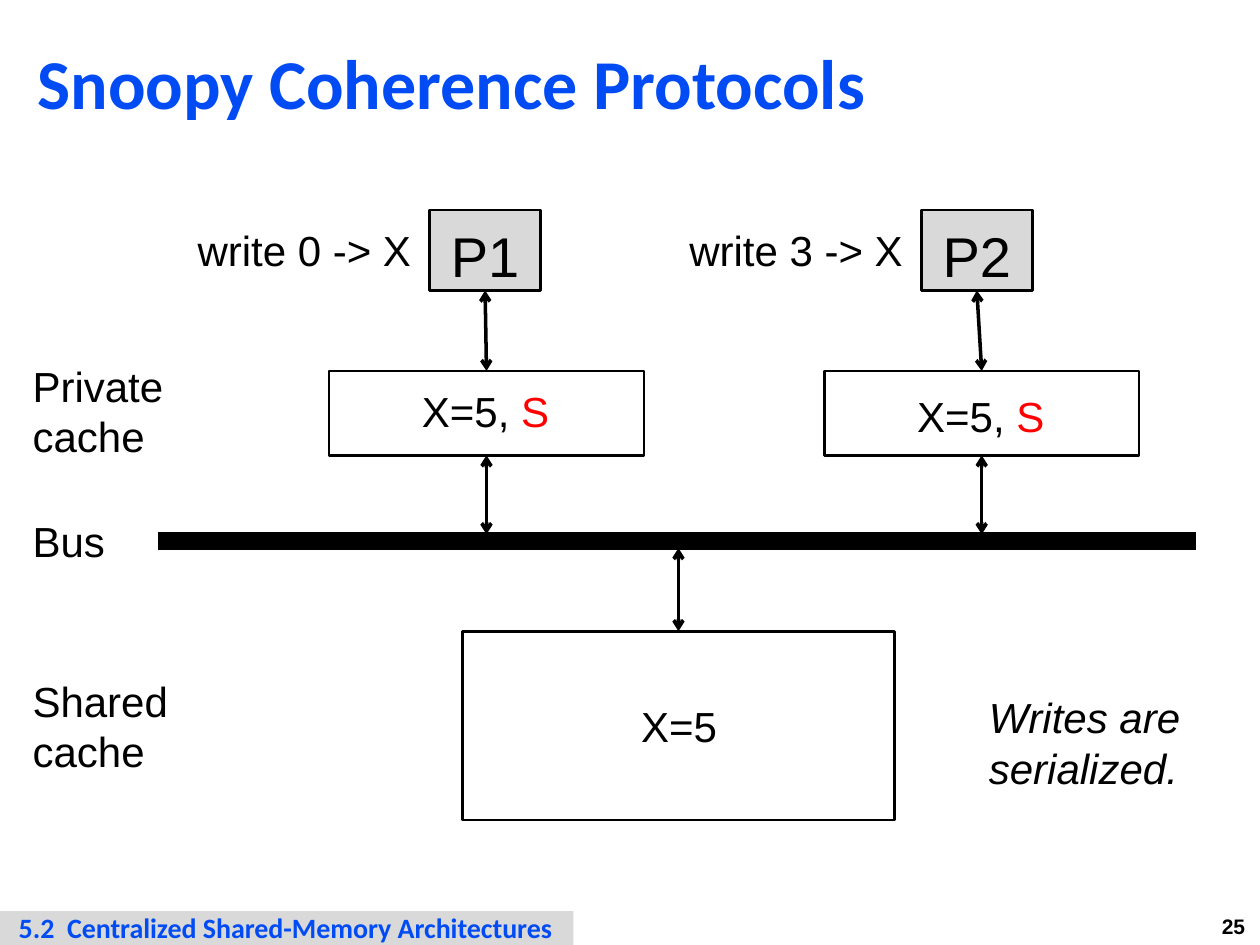
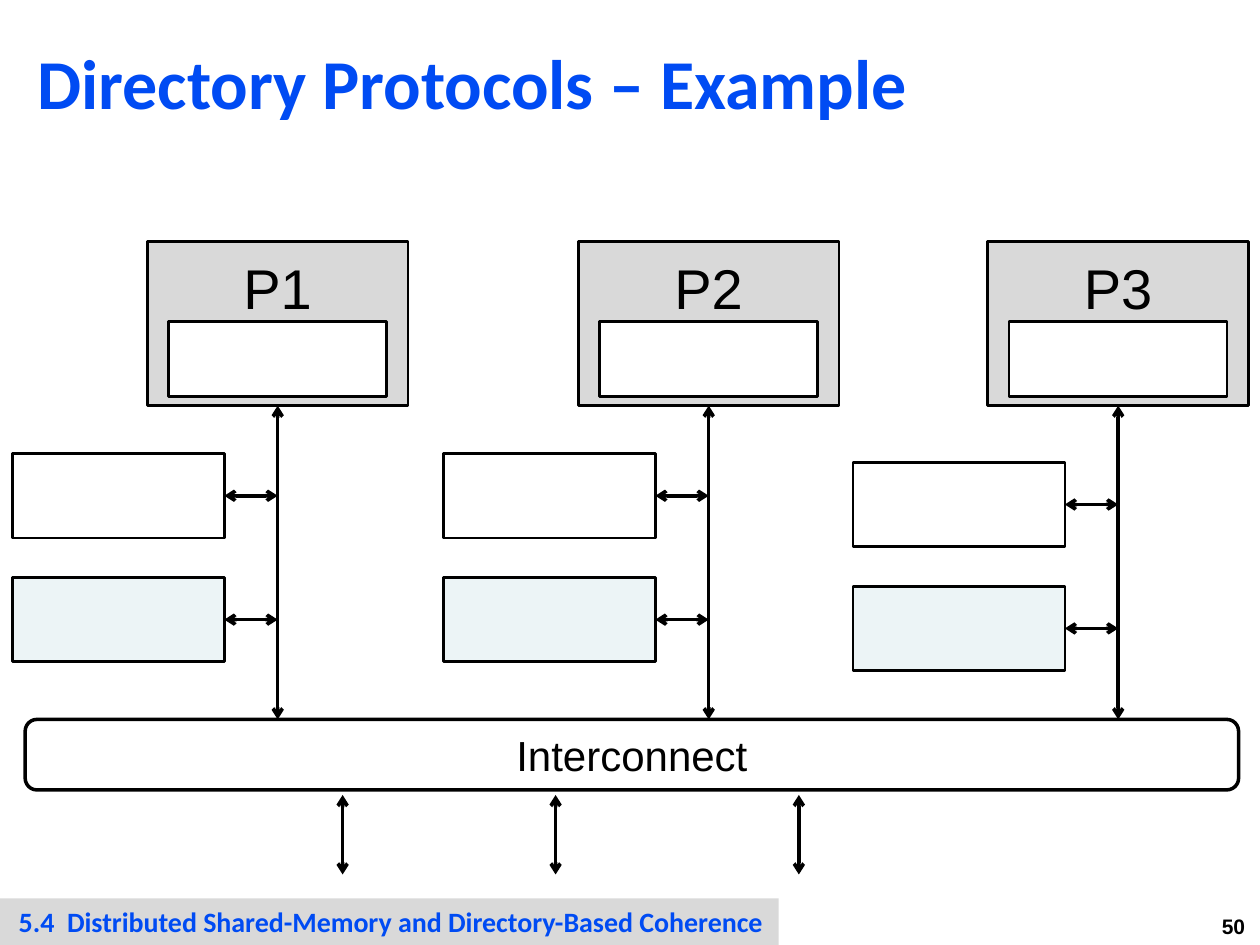
from pptx import Presentation
from pptx import util as u
from pptx.dml.color import RGBColor
from pptx.enum import shapes, text
from pptx.oxml import ns
from lxml import etree

BLUE = RGBColor(0x00, 0x4B, 0xF3)
BLACK = RGBColor(0x00, 0x00, 0x00)
RED = RGBColor(0xFF, 0x00, 0x00)
GREY = RGBColor(0xD9, 0xD9, 0xD9)
WHITE = RGBColor(0xFF, 0xFF, 0xFF)
PALE = RGBColor(0xEC, 0xF4, 0xF6)
RECT = shapes.MSO_SHAPE.RECTANGLE
ROUNDED = shapes.MSO_SHAPE.ROUNDED_RECTANGLE
ALIGN = text.PP_ALIGN
ANCHOR = text.MSO_ANCHOR
TOP, BOTTOM, RIGHT = 0, 2, 3


def add_box(slide, words, left, top, width, height, *, kind=None, fill=None,
            line=None, size=24, font="Arial", color=BLACK, bold=False,
            italic=False, align=ALIGN.LEFT, anchor=ANCHOR.TOP, wrap=True,
            inset=3.6):
    """Add a text box, or a shape if kind is given.

    A newline in words starts a paragraph; words may also be a list of
    (text, color) pairs that form one paragraph.
    """
    place = [u.Pt(value) for value in (left, top, width, height)]
    if kind is None:
        box = slide.shapes.add_textbox(*place)
    else:
        box = slide.shapes.add_shape(kind, *place)
        box.shadow.inherit = False
        if fill is None:
            box.fill.background()
        else:
            box.fill.solid()
            box.fill.fore_color.rgb = fill
        if line is None:
            box.line.fill.background()
        else:
            box.line.color.rgb = BLACK
            box.line.width = u.Pt(line)
    if not words:
        return box
    frame = box.text_frame
    frame.word_wrap = wrap
    frame.vertical_anchor = anchor
    frame.margin_top = u.Pt(inset)
    if isinstance(words, str):
        paragraphs = [[(row, color)] for row in words.split("\n")]
    else:
        paragraphs = [words]
    for index, spans in enumerate(paragraphs):
        para = frame.add_paragraph() if index else frame.paragraphs[0]
        para.alignment = align
        for words_in_span, span_color in spans:
            span = para.add_run()
            span.text = words_in_span
            span.font.name = font
            span.font.size = u.Pt(size)
            span.font.bold = bold
            span.font.italic = italic
            span.font.color.rgb = span_color
    return box


def add_line(slide, start, end, *, width=2, arrows=True, begin=None, finish=None):
    """Draw a line; begin and finish are optional (shape, side) joints."""
    points = [u.Pt(value) for value in (*start, *end)]
    connector = slide.shapes.add_connector(shapes.MSO_CONNECTOR.STRAIGHT, *points)
    connector.line.color.rgb = BLACK
    connector.line.width = u.Pt(width)
    if arrows:
        for tag in ("a:headEnd", "a:tailEnd"):
            etree.SubElement(connector.line._get_or_add_ln(), ns.qn(tag), type="arrow")
    etree.SubElement(connector._element.spPr, ns.qn("a:effectLst"))
    if begin:
        connector.begin_connect(*begin)
    if finish:
        connector.end_connect(*finish)


deck = Presentation()
deck.slide_width = u.Pt(720)
deck.slide_height = u.Pt(540)

# Title, section band and page number of every slide
PAGES = [
    ("Snoopy Coherence Protocols", "25",
     " 5.2  Centralized Shared-Memory Architectures", 520.6, 327.6, 0),
    ("Directory Protocols – Example", "50",
     " 5.4  Distributed Shared-Memory and Directory-Based Coherence", 513.4, 445, 3.6),
]
pages = []
for title, number, section, band_top, band_width, band_inset in PAGES:
    page = deck.slides.add_slide(deck.slide_layouts[6])
    add_box(page, number, 673.2, 518.4, 45.4, 21.6, size=12, bold=True,
            align=ALIGN.RIGHT)
    add_box(page, title, 14.4, 18.7, 693.4, 55.4, size=40, font="Calibri",
            color=BLUE, bold=True, anchor=ANCHOR.BOTTOM)
    add_box(page, section, 0, band_top, band_width, 540 - band_top, kind=RECT,
            fill=GREY, size=16, font="Calibri", color=BLUE, bold=True,
            inset=band_inset)
    pages.append(page)
snoopy, directory = pages

processor_style = dict(kind=RECT, fill=GREY, line=1.5, size=32,
                       align=ALIGN.CENTER, inset=6.5)

# Snoopy protocol: two processors with private caches on one bus
BUS_Y = 309.2
add_line(snoopy, (90, BUS_Y), (683.3, BUS_Y), width=10, arrows=False)
for name, value, left, cache_left, state_left, state_top in [
    ("P1", 0, 245.5, 188, 234, 216.7),
    ("P2", 3, 526.5, 471, 517, 219.6),
]:
    processor = add_box(snoopy, name, left, 120, 63.4, 46, **processor_style)
    cache = add_box(snoopy, "", cache_left, 212, 180, 48.2, kind=RECT, line=1.5)
    add_box(snoopy, [("X=5, ", BLACK), ("S", RED)], state_left, state_top, 87.8, 36,
            wrap=False)
    add_box(snoopy, f"write {value} -> X", left - 139.7, 124.5, 137.5, 36, wrap=False)
    middle = cache_left + 90
    add_line(snoopy, (middle, 212), (middle, 166),
             begin=(cache, TOP), finish=(processor, BOTTOM))
    add_line(snoopy, (middle, 260.2), (middle, 305.3), begin=(cache, BOTTOM))

shared_cache = add_box(snoopy, "", 264.2, 360.7, 247, 108, kind=RECT, line=1.5)
add_box(snoopy, "X=5", 359.3, 396.7, 58.3, 36, wrap=False)
add_line(snoopy, (387.7, 360.7), (387.7, 313.2), begin=(shared_cache, TOP))

for label, top, width, height in [
    ("Private\ncache", 202.3, 90, 65.5),
    ("Bus", 290.9, 56.2, 36),
    ("Shared\ncache", 382.3, 92.9, 65.5),
]:
    add_box(snoopy, label, 11.5, top, width, height, wrap=False)
add_box(snoopy, "Writes are serialized.", 558, 391.7, 156.2, 65.5, italic=True)

# Directory protocol: three nodes, each with cache, memory and directory
INTERCONNECT_TOP = 411.1
add_box(directory, "Interconnect", 14.4, INTERCONNECT_TOP, 693.4, 40.3, kind=ROUNDED,
        line=2, align=ALIGN.CENTER, anchor=ANCHOR.MIDDLE)
for name, left, memory_top in [
    ("P1", 84.2, 259.2), ("P2", 330.5, 259.2), ("P3", 564.5, 264.2),
]:
    processor = add_box(directory, name, left, 138.2, 149, 93.6, **processor_style)
    add_box(directory, "", left + 12, 183.6, 124.6, 43.2, kind=RECT, fill=WHITE, line=1.5)
    link_x = left + 74.5
    add_line(directory, (link_x, INTERCONNECT_TOP), (link_x, 231.8),
             finish=(processor, BOTTOM))
    for top, fill in [(memory_top, None), (memory_top + 70.8, PALE)]:
        store = add_box(directory, "", left - 77, top, 121, 48.2, kind=RECT,
                        fill=fill, line=1.5)
        add_line(directory, (left + 44, top + 24.1), (link_x, top + 24.1),
                 begin=(store, RIGHT))
for port_x in (195.8, 317.5, 456.5):
    add_line(directory, (port_x, 499.7), (port_x, 454.3))

deck.save("out.pptx")
